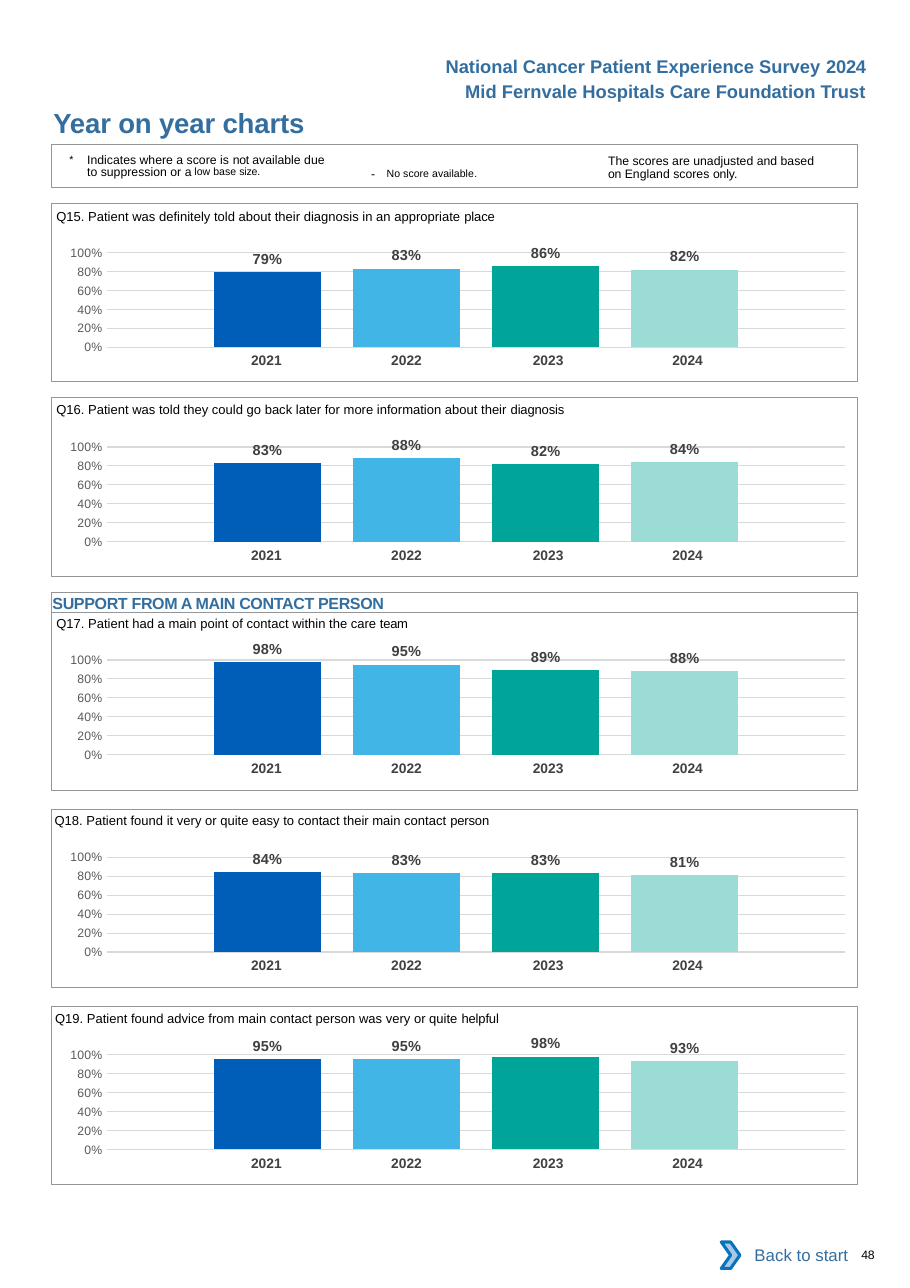
"""Build the year on year charts page of a patient experience report."""
from pptx import Presentation
from pptx import util as u
from pptx.chart.data import CategoryChartData
from pptx.dml.color import RGBColor
from pptx.enum import chart as ch, shapes, text
from pptx.oxml import parse_xml
from pptx.oxml.ns import nsdecls, qn

Cm, Pt = u.Cm, u.Pt
HEADING = RGBColor(0x33, 0x6E, 0x9F)
BLACK = RGBColor(0, 0, 0)
WHITE = RGBColor(0xFF, 0xFF, 0xFF)
FRAME = RGBColor(0x93, 0x95, 0x98)
YEAR = RGBColor(0x41, 0x40, 0x42)
LABEL = RGBColor(0x40, 0x40, 0x40)
AXIS = RGBColor(0x59, 0x59, 0x59)
GRID = RGBColor(0xD9, 0xD9, 0xD9)
CHEVRON_FILL = RGBColor(0xA8, 0xC7, 0xE9)
CHEVRON_LINE = RGBColor(0x0A, 0x74, 0xBB)
BARS = [RGBColor(0x00, 0x5E, 0xB8), RGBColor(0x41, 0xB6, 0xE6),
        RGBColor(0x00, 0xA4, 0x99), RGBColor(0x9C, 0xDC, 0xD7)]
NO_STYLE = "{2D5ABB26-0587-4C30-8999-92F81FD0307C}"
LEFT, WIDTH, PANEL_HEIGHT = 1.19, 18.59, 4.11

prs = Presentation()
prs.slide_width, prs.slide_height = Cm(20.98), Cm(29.69)
s = prs.slides.add_slide(prs.slide_layouts[6])


def write(tf, *runs, size=8, color=BLACK, bold=False, align=text.PP_ALIGN.LEFT,
          inset=None, leading=None):
    """Write runs, each a string or (string, size, spacing, baseline)."""
    tf.word_wrap = True
    if inset is not None:
        tf.margin_left = tf.margin_right = tf.margin_bottom = 0
        tf.margin_top = Cm(inset)
    p = tf.paragraphs[0]
    p.alignment = align
    if leading:
        p.line_spacing = Pt(leading)
    for run in runs:
        words, points, spacing, baseline = (run, size, 0, 0) if isinstance(run, str) else run
        r = p.add_run()
        r.text = words
        r.font.name, r.font.size, r.font.bold = "Arial", Pt(points), bold
        r.font.color.rgb = color
        for key, value in (("spc", spacing * 100), ("baseline", baseline * 1000)):
            if value:
                r.font._element.set(key, str(round(value)))
    return p


def box(left, top, width, height, kind=None, line=None, weight=0.5, fill=None):
    """Add a text box, or a preset shape with an optional line and fill."""
    area = Cm(left), Cm(top), Cm(width), Cm(height)
    if kind is None:
        return s.shapes.add_textbox(*area)
    sp = s.shapes.add_shape(kind, *area)
    sp.shadow.inherit = False
    if fill is None:
        sp.fill.background()
    else:
        sp.fill.solid()
        sp.fill.fore_color.rgb = fill
    if line is None:
        sp.line.fill.background()
    else:
        sp.line.color.rgb, sp.line.width = line, Pt(weight)
    return sp


RECT = shapes.MSO_SHAPE.RECTANGLE
RIGHT = text.PP_ALIGN.RIGHT

for top, words in ((1.28, ("National Cancer Patient Experience Survey ", ("2024", 12, -0.2, 0))),
                   (1.86, ("Mid Fernvale Hospitals Care Foundation Trust",))):
    write(box(9.5, top, 10.47, 0.53).text_frame, *words,
          size=12, color=HEADING, bold=True, align=RIGHT, inset=0)
write(box(1.23, 2.44, 11.4, 0.76).text_frame, ("Year on year charts", 18, -0.1, 0),
      color=HEADING, bold=True, inset=0)

box(LEFT, 3.33, WIDTH, 0.99, RECT, FRAME, 0.75)
p = write(box(1.6, 3.51, 6.08, 0.7).text_frame, ("*\t", 12, 0, 3),
          "Indicates where a score is ", ("not ", 8, -0.2, 0),
          "available due to suppression or ", ("a ", 8, -0.5, 0),
          ("low base", 12, 0, 7), (" size.", 12, -0.1, 7), inset=0.08, leading=8.1)
pPr = p._p.get_or_add_pPr()
pPr.set("marL", str(Cm(0.41)))
pPr.set("indent", str(-Cm(0.41)))
write(box(8.56, 3.69, 4.4, 0.55).text_frame, ("- ", 8, 2.6, 0),
      ("No score available", 12, 0, 3), (".", 12, -0.1, 3), inset=0)
write(box(14.02, 3.51, 5.11, 0.7).text_frame, "The scores are unadjusted and based",
      (" on", 8, -0.2, 0), " England scores ", ("only.", 8, -0.1, 0),
      inset=0.08, leading=8.1)

panels = [
    (4.69, 5.35, 4.8, 1.3, 0.1, "place", (0.79, 0.83, 0.86, 0.82),
     "Q15. Patient was definitely told about their diagnosis in an appropriate "),
    (9.17, 9.83, 9.25, 1.3, 0.1, "diagnosis", (0.83, 0.88, 0.82, 0.84),
     "Q16. Patient was told they could go back later for more information about their "),
    (14.12, 14.74, 14.18, 1.3, 0.2, " team", (0.98, 0.95, 0.89, 0.88),
     "Q17. Patient had a main point of contact within the care"),
    (18.66, 19.29, 18.72, 1.26, 0.1, "person", (0.84, 0.83, 0.83, 0.81),
     "Q18. Patient found it very or quite easy to contact their main contact "),
    (23.19, 23.84, 23.29, 1.27, 0.1, "helpful", (0.95, 0.95, 0.98, 0.93),
     "Q19. Patient found advice from main contact person was very or quite "),
]
for top, chart_top, question_top, question_left, tight, last_word, scores, question in panels:
    data = CategoryChartData(number_format="0%")
    data.categories = ["1"]
    for i, score in enumerate(scores, 1):
        data.add_series(f"Series {i}", [score])
    chart = s.shapes.add_chart(ch.XL_CHART_TYPE.COLUMN_CLUSTERED, Cm(1), Cm(chart_top),
                               Cm(18.6), Cm(3.28), data).chart
    chart.has_legend = chart.has_title = False
    chart.font.name, chart.font.size, chart.font.color.rgb = "Calibri", Pt(10), BLACK
    chart.category_axis.visible = False
    axis = chart.value_axis
    axis.minimum_scale, axis.maximum_scale, axis.major_unit = 0, 1, 0.2
    axis.major_tick_mark = ch.XL_TICK_MARK.NONE
    axis.format.line.fill.background()
    axis.major_gridlines.format.line.color.rgb = GRID
    axis.major_gridlines.format.line.width = Pt(0.75)
    ticks = axis.tick_labels
    ticks.number_format, ticks.number_format_is_linked = "0%", False
    ticks.font.name, ticks.font.size, ticks.font.color.rgb = "Arial", Pt(8), AXIS
    plot = chart.plots[0]
    plot.gap_width, plot.overlap, plot.vary_by_categories = 200, -30, False
    for series, color in zip(plot.series, BARS):
        series.format.fill.solid()
        series.format.fill.fore_color.rgb = color
        labels = series.data_labels
        labels.show_value = True
        labels.position = ch.XL_LABEL_POSITION.OUTSIDE_END
        labels.number_format, labels.number_format_is_linked = "0%", False
        labels.font.name, labels.font.size, labels.font.bold = "Arial", Pt(9.5), True
        labels.font.color.rgb = LABEL
    area = chart._chartSpace.chart.plotArea
    for layout in area.findall(qn("c:layout")):
        area.remove(layout)
    area.insert(0, parse_xml(
        f'<c:layout {nsdecls("c")}><c:manualLayout><c:layoutTarget val="inner"/>'
        '<c:xMode val="edge"/><c:yMode val="edge"/><c:x val="0.079"/><c:y val="0.145"/>'
        '<c:w val="0.915"/><c:h val="0.666"/></c:manualLayout></c:layout>'))

    table = s.shapes.add_table(1, 4, Cm(4.4), Cm(chart_top + 2.67), Cm(13.09), Cm(0.69)).table
    table.first_row = table.horz_banding = False
    table._tbl.tblPr.find(qn("a:tableStyleId")).text = NO_STYLE
    table.rows[0].height = Cm(0.69)
    for i, (width, margin) in enumerate(((3.23, 0), (3.23, 0), (3.4, 0.1), (3.23, 0.3))):
        table.columns[i].width = Cm(width)
        cell = table.cell(0, i)
        cell.fill.background()
        cell.margin_right = Cm(margin)
        write(cell.text_frame, str(2021 + i), size=9, color=YEAR, bold=True,
              align=text.PP_ALIGN.CENTER)

    box(LEFT, top, WIDTH, PANEL_HEIGHT, RECT, FRAME)
    write(box(question_left, question_top, 16, 0.4).text_frame, question,
          (last_word, 8.5, -tight, 0), size=8.5, inset=0)

section = box(LEFT, 13.66, WIDTH, 0.46, RECT, FRAME)
section.text_frame.vertical_anchor = text.MSO_ANCHOR.TOP
p = write(section.text_frame, ("SUPPORT FROM A MAIN CONTACT PERSON", 10.5, -0.2, 0),
          color=HEADING, bold=True, inset=0.02)
p._p.get_or_add_pPr().set("marL", str(Cm(0.02)))

back = box(16.81, 28.4, 3, 1.07, RECT, fill=WHITE)
back.text_frame.vertical_anchor = text.MSO_ANCHOR.MIDDLE
write(back.text_frame, "Back to start", size=11, color=HEADING, align=RIGHT)
box(16.63, 28.63, 0.43, 0.61, shapes.MSO_SHAPE.CHEVRON, CHEVRON_LINE, 2, CHEVRON_FILL)
write(box(19.86, 28.76, 1, 0.35).text_frame, ("48", 8, -0.2, 0), inset=0)

prs.save("out.pptx")
